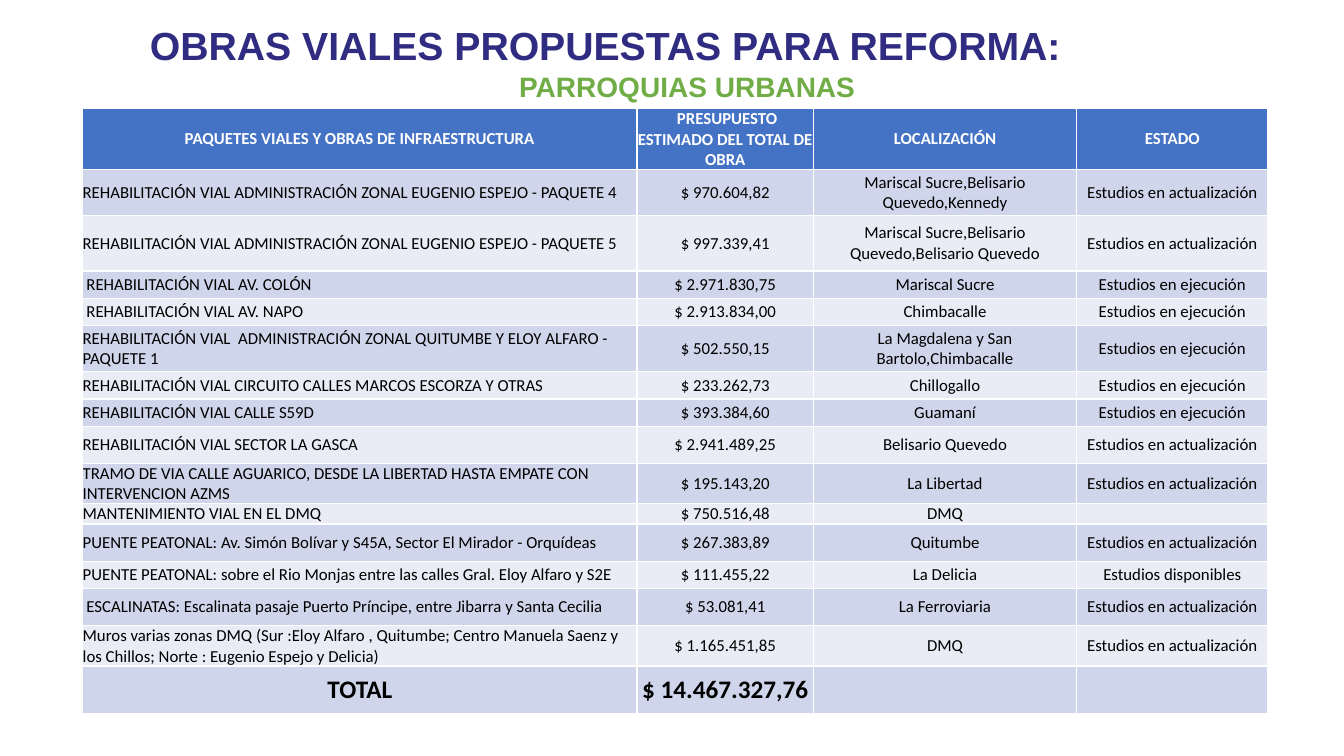
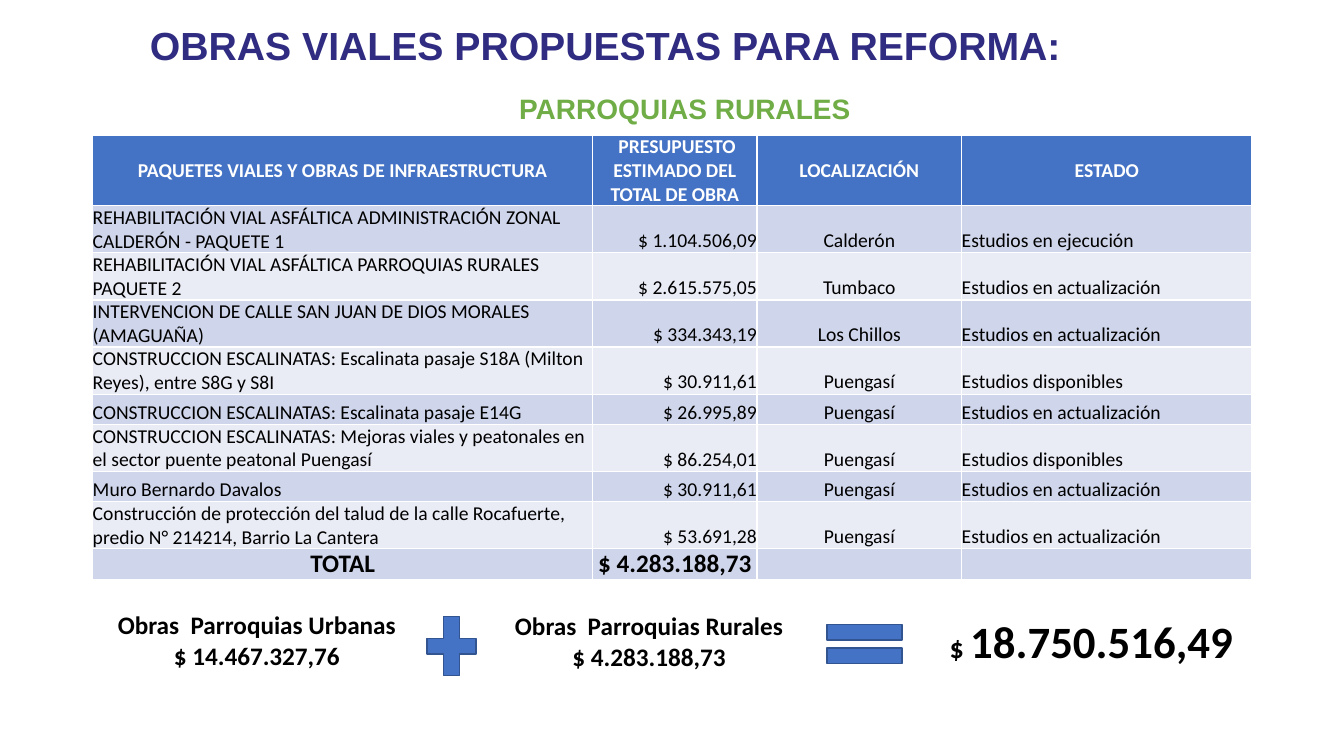
from dataclasses import dataclass
from typing import NamedTuple

from pptx import Presentation
from pptx import util as u
from pptx.dml.color import RGBColor
from pptx.enum import shapes, text

WIDTH, HEIGHT = u.Inches(13.333), u.Inches(7.5)
NAVY, GREEN, BLUE, OUTLINE = "2F2C81", "70AD47", "4472C4", "325491"
BLACK, WHITE = "000000", "FFFFFF"
BANDS = ("CFD5EA", "E9EBF5")
LEFT, CENTER, RIGHT = text.PP_ALIGN.LEFT, text.PP_ALIGN.CENTER, text.PP_ALIGN.RIGHT
MIDDLE, BOTTOM = text.MSO_ANCHOR.MIDDLE, text.MSO_ANCHOR.BOTTOM

TITLE = "OBRAS VIALES PROPUESTAS PARA REFORMA:"
HEADINGS = (
    "PAQUETES VIALES Y OBRAS DE INFRAESTRUCTURA",
    " PRESUPUESTO ESTIMADO DEL TOTAL DE OBRA",
    "LOCALIZACIÓN",
    "ESTADO",
)
UPDATING = "Estudios en actualización"
RUNNING = "Estudios en ejecución"
AVAILABLE = "Estudios disponibles"
URBAN_TOTAL, RURAL_TOTAL = "$ 14.467.327,76", "$ 4.283.188,73"


class Box(NamedTuple):
    """Percentages of the slide's width and height."""

    left: float
    top: float
    width: float
    height: float


class Work(NamedTuple):
    height: float
    name: str
    budget: str
    place: str
    status: str


@dataclass(frozen=True)
class WorksTable:
    left: float
    top: float
    columns: tuple[float, ...]
    heading_height: float
    total_height: float
    size: int
    aligns: tuple
    anchor: text.MSO_ANCHOR
    works: tuple[Work, ...]
    total: str


@dataclass(frozen=True)
class Sum:
    box: Box
    label: str
    amount: str


@dataclass(frozen=True)
class Operator:
    box: Box
    kind: shapes.MSO_SHAPE


URBAN = WorksTable(
    6.15, 14.4, (41.25, 13.13, 19.58, 14.25), 2.4, 6.27, 12,
    (LEFT, CENTER, CENTER, CENTER), MIDDLE,
    (
        Work(6.13, "REHABILITACIÓN VIAL ADMINISTRACIÓN ZONAL EUGENIO ESPEJO - PAQUETE 4",
             "$ 970.604,82", "Mariscal Sucre,Belisario Quevedo,Kennedy", UPDATING),
        Work(7.33, "REHABILITACIÓN VIAL ADMINISTRACIÓN ZONAL EUGENIO ESPEJO - PAQUETE 5",
             "$ 997.339,41", "Mariscal Sucre,Belisario Quevedo,Belisario Quevedo", UPDATING),
        Work(3.6, " REHABILITACIÓN VIAL AV. COLÓN", "$ 2.971.830,75", "Mariscal Sucre", RUNNING),
        Work(3.6, " REHABILITACIÓN VIAL AV. NAPO", "$ 2.913.834,00", "Chimbacalle", RUNNING),
        Work(6.13, "REHABILITACIÓN VIAL  ADMINISTRACIÓN ZONAL QUITUMBE Y ELOY ALFARO - PAQUETE 1",
             "$ 502.550,15", "La Magdalena y San Bartolo,Chimbacalle", RUNNING),
        Work(3.6, "REHABILITACIÓN VIAL CIRCUITO CALLES MARCOS ESCORZA Y OTRAS",
             "$ 233.262,73", "Chillogallo", RUNNING),
        Work(3.6, "REHABILITACIÓN VIAL CALLE S59D", "$ 393.384,60", "Guamaní", RUNNING),
        Work(4.93, "REHABILITACIÓN VIAL SECTOR LA GASCA",
             "$ 2.941.489,25", "Belisario Quevedo", UPDATING),
        Work(4.93, "TRAMO DE VIA CALLE AGUARICO, DESDE LA LIBERTAD HASTA EMPATE CON INTERVENCION AZMS",
             "$ 195.143,20", "La Libertad", UPDATING),
        Work(1.47, "MANTENIMIENTO VIAL EN EL DMQ", "$ 750.516,48", "DMQ", ""),
        Work(4.93, "PUENTE PEATONAL: Av. Simón Bolívar y S45A, Sector El Mirador - Orquídeas",
             "$ 267.383,89", "Quitumbe", UPDATING),
        Work(3.6, "PUENTE PEATONAL: sobre el Rio Monjas entre las calles Gral. Eloy Alfaro y S2E",
             "$ 111.455,22", "La Delicia", AVAILABLE),
        Work(4.93, " ESCALINATAS: Escalinata pasaje Puerto Príncipe, entre Jibarra y Santa Cecilia",
             "$ 53.081,41", "La Ferroviaria", UPDATING),
        Work(4.93, "Muros varias zonas DMQ (Sur :Eloy Alfaro , Quitumbe; Centro Manuela Saenz y "
             "los Chillos; Norte : Eugenio Espejo y Delicia)",
             "$ 1.165.451,85", "DMQ", UPDATING),
    ),
    URBAN_TOTAL,
)

RURAL = WorksTable(
    6.9, 17.87, (37.2, 12.23, 15.23, 21.6), 7.6, 3.2, 14,
    (LEFT, RIGHT, CENTER, LEFT), BOTTOM,
    (
        Work(5.07, "REHABILITACIÓN VIAL ASFÁLTICA ADMINISTRACIÓN ZONAL CALDERÓN - PAQUETE 1",
             "$ 1.104.506,09", "Calderón", RUNNING),
        Work(5.07, "REHABILITACIÓN VIAL ASFÁLTICA PARROQUIAS RURALES  PAQUETE 2",
             "$ 2.615.575,05", "Tumbaco", UPDATING),
        Work(5.07, "INTERVENCION DE CALLE SAN JUAN DE DIOS MORALES (AMAGUAÑA)",
             "$ 334.343,19", "Los Chillos", UPDATING),
        Work(5.07, "CONSTRUCCION ESCALINATAS: Escalinata pasaje S18A (Milton Reyes), entre S8G y S8I",
             "$ 30.911,61", "Puengasí", AVAILABLE),
        Work(4, "CONSTRUCCION ESCALINATAS: Escalinata pasaje E14G",
             "$ 26.995,89", "Puengasí", UPDATING),
        Work(5.07, "CONSTRUCCION ESCALINATAS: Mejoras viales y peatonales en el sector puente "
             "peatonal Puengasí", "$ 86.254,01", "Puengasí", AVAILABLE),
        Work(4, "Muro Bernardo Davalos", "$ 30.911,61", "Puengasí", UPDATING),
        Work(5.07, "Construcción de protección del talud de la calle Rocafuerte, predio N° 214214, "
             "Barrio La Cantera", "$ 53.691,28", "Puengasí", UPDATING),
    ),
    RURAL_TOTAL,
)

OPERATORS = (
    Operator(Box(31.13, 80.13, 4.95, 10.67), shapes.MSO_SHAPE.MATH_PLUS),
    Operator(Box(60.53, 80.8, 7.58, 8.8), shapes.MSO_SHAPE.MATH_EQUAL),
)
SUMS = (
    Sum(Box(8.03, 80, 22.35, 9.47), "Obras  Parroquias Urbanas", URBAN_TOTAL),
    Sum(Box(37.58, 80.13, 21.68, 9.47), "Obras  Parroquias Rurales", RURAL_TOTAL),
)


def rgb(value: str) -> RGBColor:
    return RGBColor.from_string(value)


def across(share: float) -> int:
    return round(WIDTH * share / 100)


def down(share: float) -> int:
    return round(HEIGHT * share / 100)


def place(box: Box) -> tuple[int, int, int, int]:
    return across(box.left), down(box.top), across(box.width), down(box.height)


def write(paragraph, content: str, *, size: int, color: str = BLACK,
          font: str = "Calibri", bold: bool = False, align=LEFT) -> None:
    paragraph.alignment = align
    run = paragraph.add_run()
    run.text = content
    run.font.size = u.Pt(size)
    run.font.name = font
    run.font.bold = bold
    run.font.color.rgb = rgb(color)


def add_text_frame(slide, box: Box, *, wrap: bool = False):
    frame = slide.shapes.add_textbox(*place(box)).text_frame
    frame.word_wrap = wrap
    frame.auto_size = text.MSO_AUTO_SIZE.SHAPE_TO_FIT_TEXT
    return frame


def add_titles(slide, subtitle: str, subtitle_box: Box) -> None:
    title = add_text_frame(slide, Box(10.42, 2.13, 83.93, 7.6), wrap=True)
    write(title.paragraphs[0], TITLE, size=28, color=NAVY, font="Arial", bold=True)
    frame = add_text_frame(slide, subtitle_box, wrap=True)
    write(frame.paragraphs[0], subtitle, size=20, color=GREEN, font="Arial", bold=True)


def fill_cell(cell, content: str, *, fill: str, anchor, size: int, **style) -> None:
    cell.margin_left = cell.margin_right = cell.margin_top = cell.margin_bottom = 0
    cell.vertical_anchor = anchor
    cell.fill.solid()
    cell.fill.fore_color.rgb = rgb(fill)
    paragraph = cell.text_frame.paragraphs[0]
    if content:
        write(paragraph, content, size=size, **style)
    else:
        paragraph._p.get_or_add_endParaRPr().set("sz", str(size * 100))


def add_works(slide, plan: WorksTable) -> None:
    heights = (plan.heading_height, *(work.height for work in plan.works), plan.total_height)
    box = Box(plan.left, plan.top, sum(plan.columns), sum(heights))
    table = slide.shapes.add_table(len(heights), len(plan.columns), *place(box)).table
    for column, width in zip(table.columns, plan.columns):
        column.width = across(width)
    for row, height in zip(table.rows, heights):
        row.height = down(height)

    for index, heading in enumerate(HEADINGS):
        fill_cell(table.cell(0, index), heading, fill=BLUE, anchor=MIDDLE,
                  size=plan.size, color=WHITE, bold=True, align=CENTER)
    for number, work in enumerate(plan.works, 1):
        for index, (content, align) in enumerate(zip(work[1:], plan.aligns)):
            fill_cell(table.cell(number, index), content, fill=BANDS[(number - 1) % 2],
                      anchor=plan.anchor, size=plan.size, align=align)
    last = len(heights) - 1
    for index, content in enumerate(("TOTAL", plan.total, "", "")):
        fill_cell(table.cell(last, index), content, fill=BANDS[(last - 1) % 2],
                  anchor=MIDDLE, size=18 if content else plan.size, bold=True, align=CENTER)


def add_operator(slide, operator: Operator) -> None:
    shape = slide.shapes.add_shape(operator.kind, *place(operator.box))
    shape.shadow.inherit = False
    shape.fill.solid()
    shape.fill.fore_color.rgb = rgb(BLUE)
    shape.line.color.rgb = rgb(OUTLINE)
    shape.line.width = u.Pt(1)


def add_sum(slide, item: Sum) -> None:
    frame = add_text_frame(slide, item.box)
    write(frame.paragraphs[0], item.label, size=18, bold=True)
    write(frame.add_paragraph(), item.amount, size=18, bold=True, align=CENTER)


def add_grand_total(slide) -> None:
    paragraph = add_text_frame(slide, Box(69.45, 80.53, 23.7, 8.53)).paragraphs[0]
    write(paragraph, " $ ", size=20, bold=True)
    write(paragraph, "18.750.516,49", size=32, bold=True)


def main() -> None:
    presentation = Presentation()
    presentation.slide_width, presentation.slide_height = WIDTH, HEIGHT
    blank = presentation.slide_layouts[6]

    urban = presentation.slides.add_slide(blank)
    add_titles(urban, "PARROQUIAS URBANAS", Box(37.88, 8.53, 46.8, 5.87))
    add_works(urban, URBAN)

    rural = presentation.slides.add_slide(blank)
    add_titles(rural, "PARROQUIAS RURALES", Box(37.88, 11.47, 26.33, 5.87))
    add_works(rural, RURAL)
    for operator in OPERATORS:
        add_operator(rural, operator)
    for item in SUMS:
        add_sum(rural, item)
    add_grand_total(rural)

    presentation.save("out.pptx")


if __name__ == "__main__":
    main()
